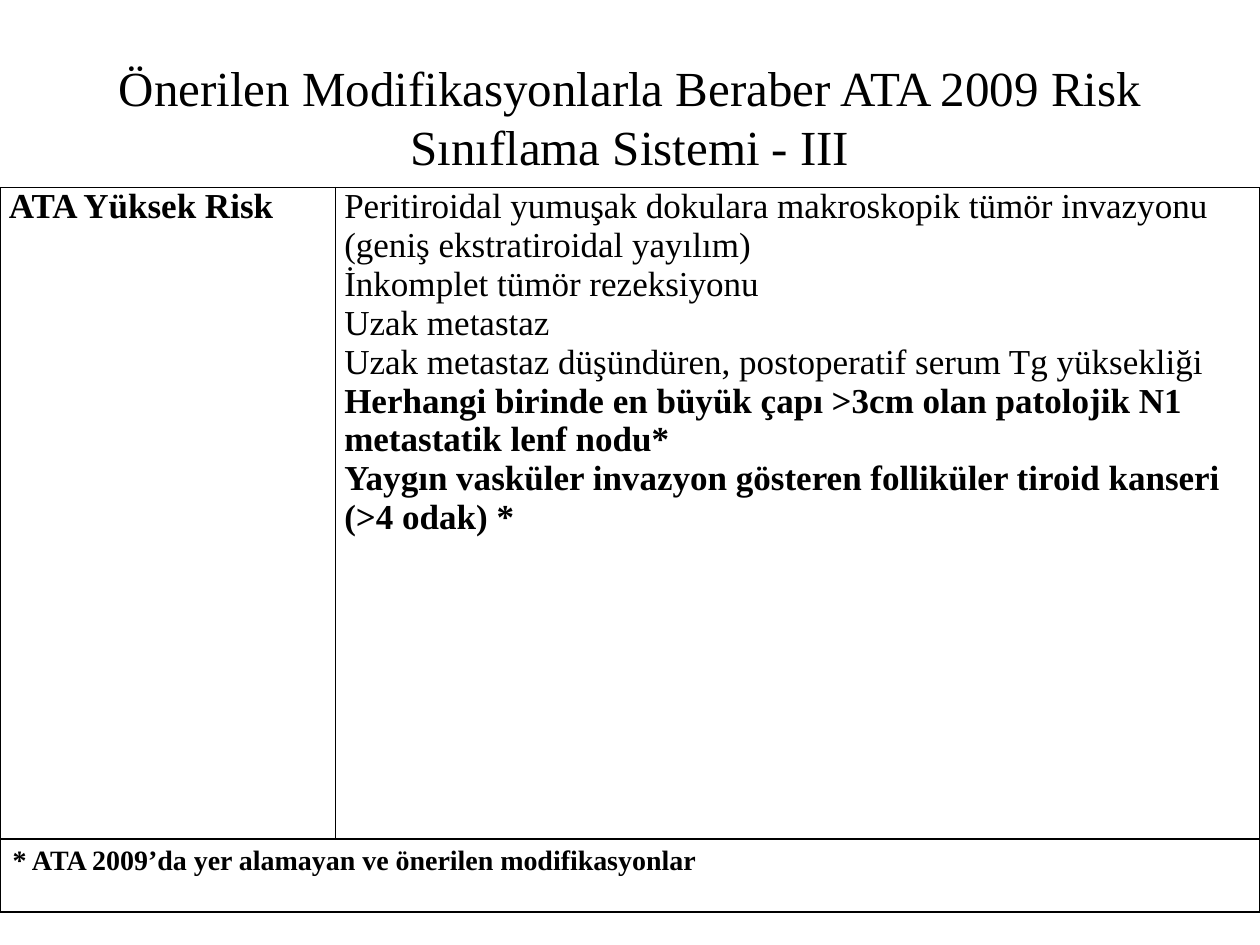
"""Builds the slide on the ATA high risk group as a title and a bordered table."""
import lxml.etree
import pptx
import pptx.dml.color
import pptx.enum.text
import pptx.oxml.ns
import pptx.util
from pptx.util import Cm

FONT = "Times New Roman"
BLACK, WHITE = "000000", "FFFFFF"
TITLE = "Önerilen Modifikasyonlarla Beraber ATA 2009 Risk Sınıflama Sistemi - III"
RISK_GROUP = [("ATA Yüksek Risk", True)]
CRITERIA = [
    ("Peritiroidal yumuşak dokulara makroskopik tümör invazyonu (geniş ekstratiroidal yayılım)", False),
    ("İnkomplet tümör rezeksiyonu", False),
    ("Uzak metastaz", False),
    ("Uzak metastaz düşündüren, postoperatif serum Tg yüksekliği", False),
    ("Herhangi birinde en büyük çapı >3cm olan patolojik N1 metastatik lenf nodu*", True),
    ("Yaygın vasküler invazyon gösteren folliküler tiroid kanseri (>4 odak)\u00a0*", True),
]
FOOTNOTE = [("* ATA 2009’da yer alamayan ve önerilen modifikasyonlar", True)]
COLUMN_WIDTHS = [6.76, 18.64]
ROW_HEIGHTS = [13.13, 1.47]


def color(value):
    return pptx.dml.color.RGBColor.from_string(value)


def write(text_frame, lines, size):
    text_frame.text = "\n".join(text for text, bold in lines)
    for paragraph, (text, bold) in zip(text_frame.paragraphs, lines):
        paragraph.font.name = FONT
        paragraph.font.size = pptx.util.Pt(size)
        paragraph.font.bold = bold
        paragraph.font.color.rgb = color(BLACK)


def style_cell(cell):
    properties = cell._tc.get_or_add_tcPr()
    for side in ("lnL", "lnR", "lnT", "lnB"):
        line = lxml.etree.SubElement(properties, pptx.oxml.ns.qn(f"a:{side}"), w=str(pptx.util.Pt(1)))
        fill = lxml.etree.SubElement(line, pptx.oxml.ns.qn("a:solidFill"))
        lxml.etree.SubElement(fill, pptx.oxml.ns.qn("a:srgbClr"), val=BLACK)
    cell.fill.solid()
    cell.fill.fore_color.rgb = color(WHITE)


def add_title(slide):
    title = slide.shapes.add_textbox(Cm(1.27), Cm(0.76), Cm(22.86), Cm(3.18))
    title.text_frame.word_wrap = True
    title.text_frame.vertical_anchor = pptx.enum.text.MSO_ANCHOR.MIDDLE
    write(title.text_frame, [(TITLE, False)], 28)
    title.text_frame.paragraphs[0].alignment = pptx.enum.text.PP_ALIGN.CENTER


def add_risk_table(slide):
    table = slide.shapes.add_table(
        len(ROW_HEIGHTS), len(COLUMN_WIDTHS), Cm(0), Cm(3.78),
        Cm(sum(COLUMN_WIDTHS)), Cm(sum(ROW_HEIGHTS))).table
    table.first_row = table.horz_banding = False
    for column, width in zip(table.columns, COLUMN_WIDTHS):
        column.width = Cm(width)
    for row, height in zip(table.rows, ROW_HEIGHTS):
        row.height = Cm(height)
    for cell in table.iter_cells():
        style_cell(cell)
    for cell, lines in zip(table.rows[0].cells, (RISK_GROUP, CRITERIA)):
        cell.margin_left = cell.margin_right = Cm(0.18)
        cell.margin_top = cell.margin_bottom = Cm(0)
        write(cell.text_frame, lines, 20)
    footnote = table.cell(1, 0)
    footnote.merge(table.cell(1, 1))
    write(footnote.text_frame, FOOTNOTE, 16)


def main():
    presentation = pptx.Presentation()
    presentation.slide_width, presentation.slide_height = Cm(25.4), Cm(19.05)
    slide = presentation.slides.add_slide(presentation.slide_layouts[6])
    add_title(slide)
    add_risk_table(slide)
    presentation.save("out.pptx")


if __name__ == "__main__":
    main()
